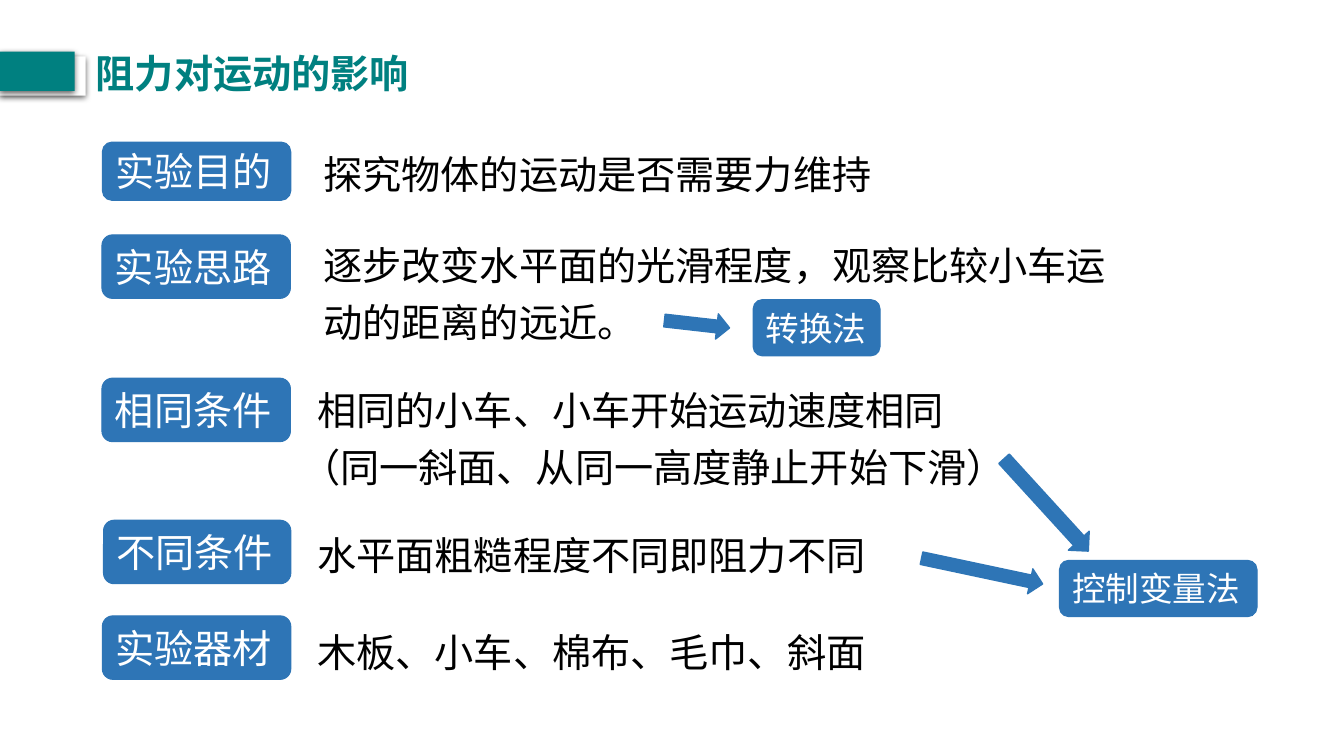
from lxml import etree
from pptx import Presentation
from pptx.dml.color import RGBColor
from pptx.enum.shapes import MSO_SHAPE
from pptx.enum.text import MSO_ANCHOR, PP_ALIGN
from pptx.oxml.ns import qn
from pptx.util import Cm, Pt

RECTANGLE = MSO_SHAPE.RECTANGLE
ROUNDED = MSO_SHAPE.ROUNDED_RECTANGLE
ARROW = MSO_SHAPE.RIGHT_ARROW
TOP, MIDDLE = MSO_ANCHOR.TOP, MSO_ANCHOR.MIDDLE
LEFT = PP_ALIGN.LEFT

BLUE = RGBColor(0x2E, 0x75, 0xB6)
TEAL = RGBColor(0x00, 0x80, 0x80)
WHITE = RGBColor(0xFF, 0xFF, 0xFF)
BLACK = RGBColor(0x00, 0x00, 0x00)
FONT = "Noto Sans CJK SC"

presentation = Presentation()
presentation.slide_width = Cm(33.87)
presentation.slide_height = Cm(19.05)
slide = presentation.slides.add_slide(presentation.slide_layouts[5])


def write(shape, text, size, color, anchor=TOP, bold=False):
    frame = shape.text_frame
    frame.word_wrap = True
    frame.vertical_anchor = anchor
    frame.text = text
    paragraph = frame.paragraphs[0]
    paragraph.alignment = LEFT
    font = paragraph.font
    font.name, font.size, font.bold = FONT, Pt(size), bold
    font.color.rgb = color
    # East Asian typeface
    properties = paragraph._p.pPr.find(qn("a:defRPr"))
    etree.SubElement(properties, qn("a:ea")).set("typeface", FONT)
    return paragraph


def add_filled(kind, left, top, width, height, color, line_width=0.75):
    shape = slide.shapes.add_shape(kind, Cm(left), Cm(top), Cm(width), Cm(height))
    shape.shadow.inherit = False
    shape.fill.solid()
    shape.fill.fore_color.rgb = color
    if line_width:
        shape.line.color.rgb = color
        shape.line.width = Pt(line_width)
    else:
        shape.line.fill.background()
    return shape


# Title with its two shadowed bars
for top, width, color in [(1.42, 2.16, WHITE), (1.3, 1.88, TEAL)]:
    bar = add_filled(RECTANGLE, 0, top, width, 0.99, color, 0)
    effects = bar._element.spPr.find(qn("a:effectLst"))
    shadow = etree.SubElement(effects, qn("a:outerShdw"), blurRad=str(Pt(4.5)),
                              dist=str(Pt(1.5)), dir="5400000",
                              algn="t", rotWithShape="0")
    shadow_color = etree.SubElement(shadow, qn("a:srgbClr"), val="000000")
    etree.SubElement(shadow_color, qn("a:alpha"), val="63000")

title = slide.shapes.title
title.left, title.top, title.width, title.height = Cm(2.16), Cm(1.12), Cm(9.5), Cm(1.45)
write(title, "阻力对运动的影响", 28, TEAL, MIDDLE, True)

# Row labels and method labels
labels = [
    ("实验目的", 2.58, 3.58, 4.75, 1.47, 28),
    ("实验思路", 2.57, 5.92, 4.75, 1.6, 28),
    ("相同条件", 2.57, 9.53, 4.75, 1.6, 28),
    ("不同条件", 2.61, 13.11, 4.72, 1.6, 28),
    ("实验器材", 2.58, 15.52, 4.75, 1.6, 28),
    ("转换法", 18.98, 7.55, 3.2, 1.42, 24),
    ("控制变量法", 26.7, 14.12, 4.98, 1.42, 24),
]
for text, left, top, width, height, size in labels:
    label = add_filled(ROUNDED, left, top, width, height, BLUE)
    write(label, text, size, WHITE, MIDDLE)

# Explanations
explanations = [
    ("探究物体的运动是否需要力维持", 7.9, 3.66, 17.9, 1.45, 1),
    ("逐步改变水平面的光滑程度，观察比较小车运动的距离的远近。", 7.9, 5.72, 21.2, 3.12, 1.2),
    ("相同的小车、小车开始运动速度相同", 7.75, 9.6, 20.1, 1.45, 1),
    ("（同一斜面、从同一高度静止开始下滑）", 7.34, 11.05, 20.95, 1.45, 1),
    ("水平面粗糙程度不同即阻力不同", 7.75, 13.26, 17, 1.45, 1),
    ("木板、小车、棉布、毛巾、斜面", 7.75, 15.72, 17, 1.45, 1),
]
for text, left, top, width, height, spacing in explanations:
    box = slide.shapes.add_textbox(Cm(left), Cm(top), Cm(width), Cm(height))
    write(box, text, 28, BLACK).line_spacing = spacing

# Arrows to the method labels
for left, top, width, height, angle in [
    (16.74, 7.85, 1.65, 0.64, 6.5),
    (24.79, 12.37, 3.15, 0.71, 47.6),
    (23.19, 14.07, 3.12, 0.64, 12),
]:
    arrow = add_filled(ARROW, left, top, width, height, BLUE, 1)
    arrow.rotation = angle

presentation.save("out.pptx")
